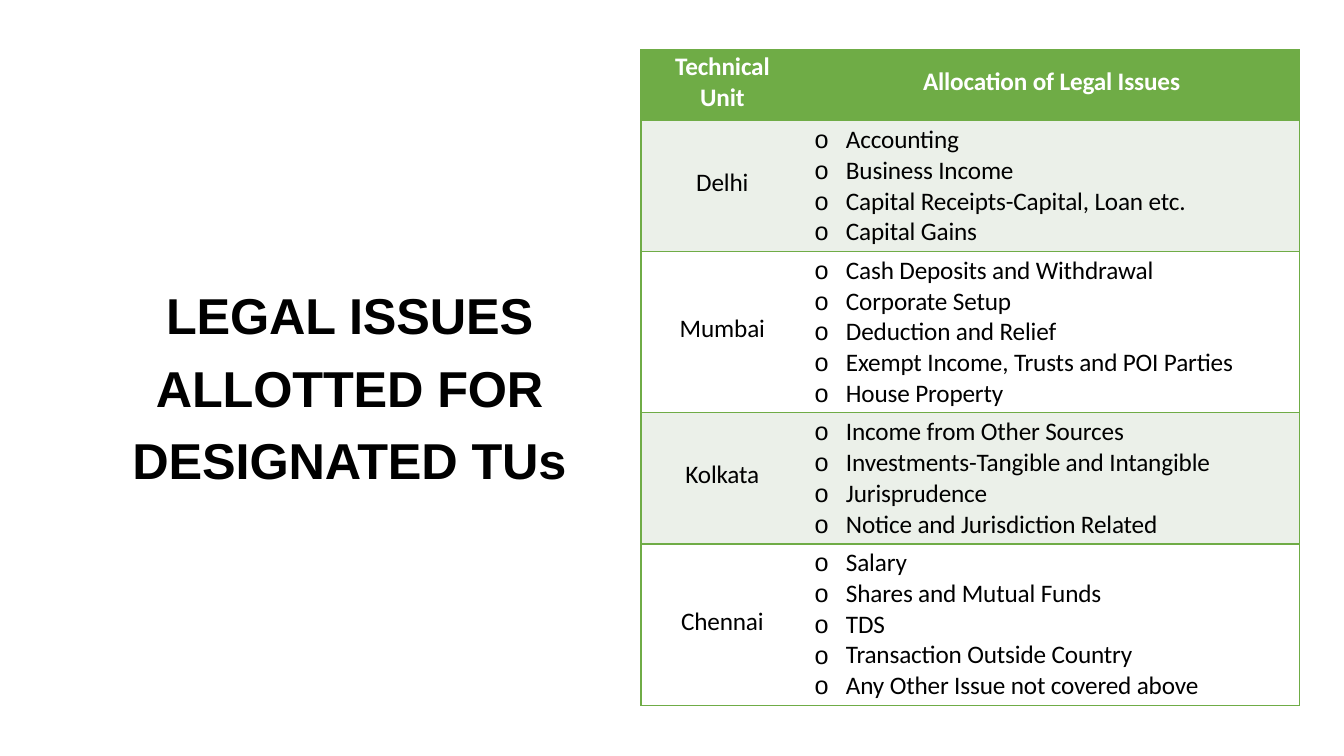
import dataclasses

import lxml.etree
import pptx
import pptx.dml.color
import pptx.enum.text
import pptx.oxml.ns
import pptx.util

ALIGN = pptx.enum.text.PP_ALIGN
ANCHOR = pptx.enum.text.MSO_ANCHOR
PLAIN_TABLE_STYLE = "{2D5ABB26-0587-4C30-8999-92F81FD0307C}"

HEADINGS = ("Technical Unit", "Allocation of Legal Issues")
ISSUES = {
    "Delhi": ["Accounting", "Business Income", "Capital Receipts-Capital, Loan etc.", "Capital Gains"],
    "Mumbai": ["Cash Deposits and Withdrawal", "Corporate Setup", "Deduction and Relief",
               "Exempt Income, Trusts and POI Parties", "House Property"],
    "Kolkata": ["Income from Other Sources", "Investments-Tangible and Intangible",
                "Jurisprudence", "Notice and Jurisdiction Related"],
    "Chennai": ["Salary", "Shares and Mutual Funds", "TDS", "Transaction Outside Country",
                "Any Other Issue not covered above"],
}


@dataclasses.dataclass(frozen=True)
class Theme:
    """Hold the colours, fonts and type sizes."""
    green: str = "6FAC46"
    tint: str = "EBF0E9"
    black: str = "000000"
    white: str = "FFFFFF"
    title_font: str = "Arial"
    table_font: str = "Calibri"
    title_size: int = 36
    table_size: int = 18
    tracking: int = -10


@dataclasses.dataclass(frozen=True)
class Box:
    """Hold a rectangle in EMU."""
    left: int
    top: int
    width: int
    height: int


THEME = Theme()


def share_box(deck, left, top, width, height):
    """Return a box given as shares of the slide."""
    wide, high = deck.slide_width, deck.slide_height
    return Box(int(left * wide), int(top * high), int(width * wide), int(height * high))


def apply_format(target, values):
    """Set each named attribute on the target."""
    for name, value in values.items():
        setattr(target, name, value)


def add_span(para, text, font, size, colour, bold):
    """Add one formatted run to a paragraph."""
    span = para.add_run()
    span.text = text
    apply_format(span.font, {"name": font, "size": pptx.util.Pt(size), "bold": bold})
    span.font.color.rgb = pptx.dml.color.RGBColor.from_string(colour)
    span.font._element.set("spc", str(THEME.tracking))


def add_child(parent, tag, **values):
    """Append a drawing element with attributes."""
    return lxml.etree.SubElement(parent, pptx.oxml.ns.qn(tag), values)


def add_bullet(para):
    """Give a paragraph a hanging round bullet."""
    props = para._p.get_or_add_pPr()
    apply_format(props, {"algn": ALIGN.LEFT})
    props.set("marL", str(pptx.util.Inches(0.53)))
    props.set("indent", str(pptx.util.Inches(-0.31)))
    add_child(props, "a:buFont", typeface=THEME.title_font)
    add_child(props, "a:buChar", char="o")


def add_borders(cell, sides):
    """Draw green one-point lines on the named sides."""
    props = cell._tc.get_or_add_tcPr()
    for side in sides:
        line = add_child(props, f"a:ln{side}", w=str(pptx.util.Pt(1)))
        fill = add_child(line, "a:solidFill")
        add_child(fill, "a:srgbClr", val=THEME.green)


def fill_cell(cell, lines, side, fill, colour, bold=False, bulleted=False):
    """Write, colour and outline one table cell."""
    left = 0 if bulleted else pptx.util.Inches(0.11)
    bottom = 0 if bulleted else pptx.util.Inches(0.06)
    apply_format(cell, {"margin_left": left, "margin_right": 0, "margin_top": 0,
                        "margin_bottom": bottom, "vertical_anchor": ANCHOR.MIDDLE})
    add_borders(cell, (side, "T", "B"))
    cell.fill.solid()
    cell.fill.fore_color.rgb = pptx.dml.color.RGBColor.from_string(fill)
    for index, text in enumerate(lines):
        para = cell.text_frame.add_paragraph() if index else cell.text_frame.paragraphs[0]
        para.alignment = ALIGN.CENTER
        if bulleted:
            add_bullet(para)
        add_span(para, text, THEME.table_font, THEME.table_size, colour, bold)


def place_title(page, box):
    """Place the slide title in its box."""
    title = page.shapes.title
    apply_format(title, dataclasses.asdict(box))
    frame = title.text_frame
    apply_format(frame, {"margin_left": 0, "margin_right": 0, "margin_top": 0, "margin_bottom": 0,
                         "word_wrap": True, "vertical_anchor": ANCHOR.TOP,
                         "auto_size": pptx.enum.text.MSO_AUTO_SIZE.NONE})
    para = frame.paragraphs[0]
    apply_format(para, {"alignment": ALIGN.CENTER, "line_spacing": 1.2})
    add_span(para, "LEGAL ISSUES ALLOTTED FOR DESIGNATED TUs", THEME.title_font,
             THEME.title_size, THEME.black, True)


def place_issue_table(page, box):
    """Place the table of units, with row heights set by line counts."""
    frame = page.shapes.add_table(len(ISSUES) + 1, 2, box.left, box.top, box.width, box.height)
    table = frame.table
    table._tbl.tblPr.find(pptx.oxml.ns.qn("a:tableStyleId")).text = PLAIN_TABLE_STYLE
    table.horz_banding = False
    for column, share in zip(table.columns, (0.23, 0.77)):
        column.width = int(box.width * share)
    units = [3 * count + 1 for count in (2, *map(len, ISSUES.values()))]
    for row, unit in zip(table.rows, units):
        row.height = box.height * unit // sum(units)
    for column, (heading, side) in enumerate(zip(HEADINGS, "LR")):
        fill_cell(table.cell(0, column), [heading], side, THEME.green, THEME.white, bold=True)
    for row, (city, issues) in enumerate(ISSUES.items(), 1):
        fill = THEME.tint if row % 2 else THEME.white
        fill_cell(table.cell(row, 0), [city], "L", fill, THEME.black)
        fill_cell(table.cell(row, 1), issues, "R", fill, THEME.black, bulleted=True)


def main():
    """Build and save the deck."""
    deck = pptx.Presentation()
    apply_format(deck, {"slide_width": pptx.util.Inches(13.33), "slide_height": pptx.util.Inches(7.5)})
    page = deck.slides.add_slide(deck.slide_layouts[5])
    place_title(page, share_box(deck, 0.095, 0.36, 0.33, 0.29))
    place_issue_table(page, share_box(deck, 0.477, 0.066, 0.49, 0.867))
    deck.save("out.pptx")


if __name__ == "__main__":
    main()
